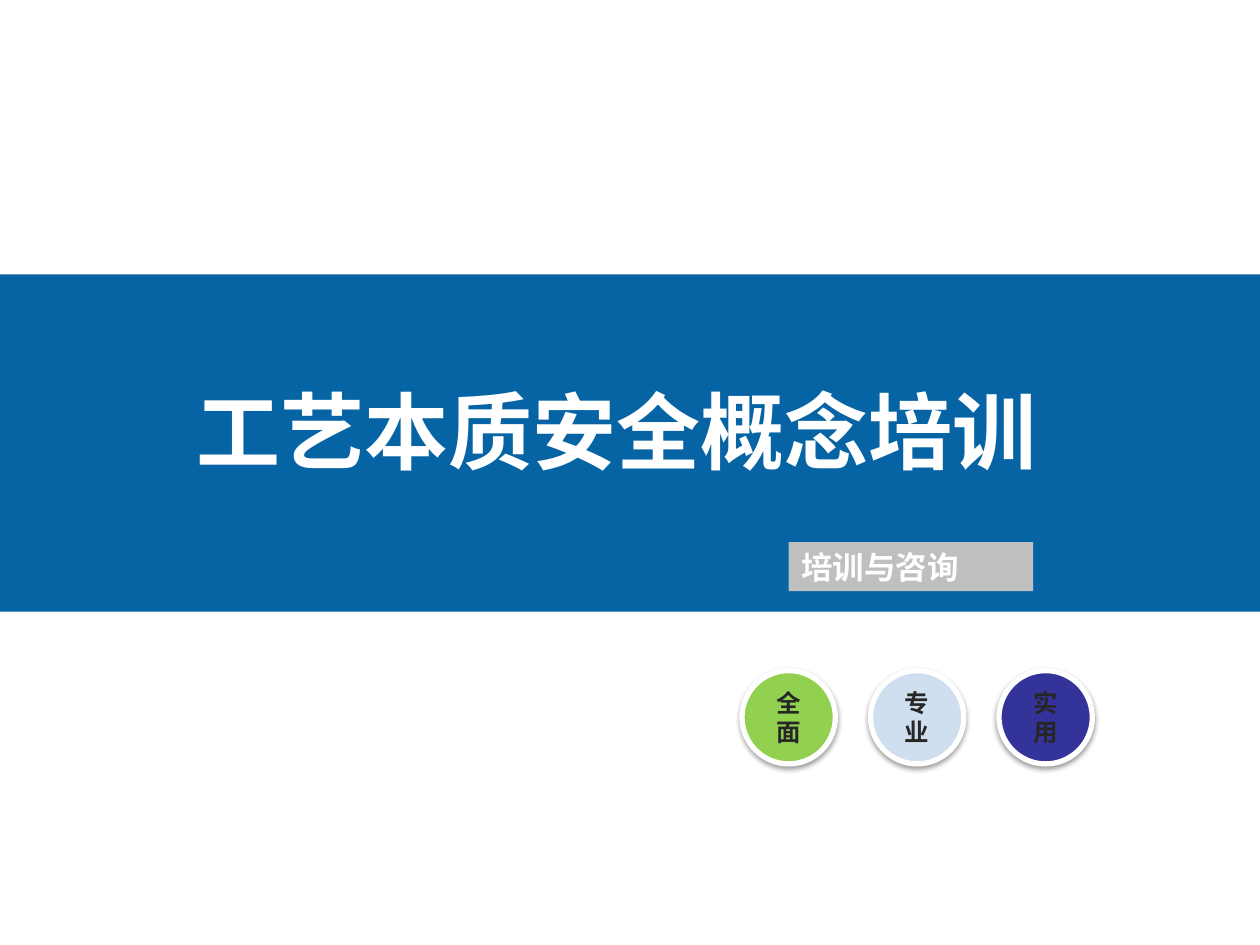
from lxml.etree import SubElement
from pptx import Presentation
from pptx.dml.color import RGBColor
from pptx.enum.shapes import MSO_SHAPE
from pptx.enum.text import MSO_ANCHOR, PP_ALIGN
from pptx.oxml import parse_xml
from pptx.oxml.ns import nsdecls, qn
from pptx.util import Cm, Pt

COLORS = {
    "band": "0664A4",
    "tag": "BFBFBF",
    "white": "FFFFFF",
    "dark": "262626",
    "green": "92D050",
    "pale": "D0DFF0",
    "indigo": "333399",
}
CJK = "Noto Sans CJK SC"


def rgb(name):
    return RGBColor.from_string(COLORS[name])


def write(tf, text, size=18, color="white", font=CJK, align=PP_ALIGN.LEFT):
    tf.word_wrap = True
    tf.vertical_anchor = MSO_ANCHOR.MIDDLE
    p = tf.paragraphs[0]
    p.alignment = align
    r = p.add_run()
    r.text = text
    r.font.size = Pt(size)
    r.font.bold = True
    r.font.name = font
    r.font.color.rgb = rgb(color)
    SubElement(r.font._element, qn("a:ea"), typeface=CJK)


class Deck:
    def __init__(self, width, height):
        self.prs = Presentation()
        self.prs.slide_width = Cm(width)
        self.prs.slide_height = Cm(height)
        self.slide = self.prs.slides.add_slide(self.prs.slide_layouts[5])

    def shape(self, kind, box, fill):
        sp = self.slide.shapes.add_shape(kind, *map(Cm, box))
        sp.shadow.inherit = False
        sp.fill.solid()
        sp.fill.fore_color.rgb = rgb(fill)
        sp.line.fill.background()
        return sp

    def title(self, text, box):
        sp = self.slide.shapes.title
        sp.left, sp.top, sp.width, sp.height = map(Cm, box)
        write(sp.text_frame, text, size=48)
        self.slide.shapes._spTree.append(sp._element)

    def tag(self, text, box):
        sp = self.shape(MSO_SHAPE.RECTANGLE, box, "tag")
        write(sp.text_frame, text, align=PP_ALIGN.JUSTIFY)

    def badge(self, text, left, top, size, fill):
        sp = self.shape(MSO_SHAPE.OVAL, (left, top, size, size), fill)
        sp.line.color.rgb = rgb("white")
        sp.line.width = Pt(3)
        effects = sp._element.spPr.find(qn("a:effectLst"))
        effects.append(parse_xml(
            f'<a:outerShdw {nsdecls("a")} blurRad="{Pt(3.1)}" dist="{Pt(1.6)}" '
            'dir="5400000" rotWithShape="0"><a:srgbClr val="000000">'
            '<a:alpha val="38000"/></a:srgbClr></a:outerShdw>'))
        write(sp.text_frame, text, size=14, color="dark", font="Arial",
              align=PP_ALIGN.CENTER)


def main():
    deck = Deck(25.4, 19.05)
    deck.shape(MSO_SHAPE.RECTANGLE, (0, 5.53, 25.4, 6.8), "band")
    deck.title("工艺本质安全概念培训", (3.71, 7.52, 18.4, 2.31))
    deck.tag("培训与咨询", (15.9, 10.93, 4.93, 0.99))
    badges = [("全面", "green"), ("专业", "pale"), ("实用", "indigo")]
    for i, (text, fill) in enumerate(badges):
        deck.badge(text, 14.96 + 2.59 * i, 13.52, 1.88, fill)
    deck.prs.save("out.pptx")


if __name__ == "__main__":
    main()
